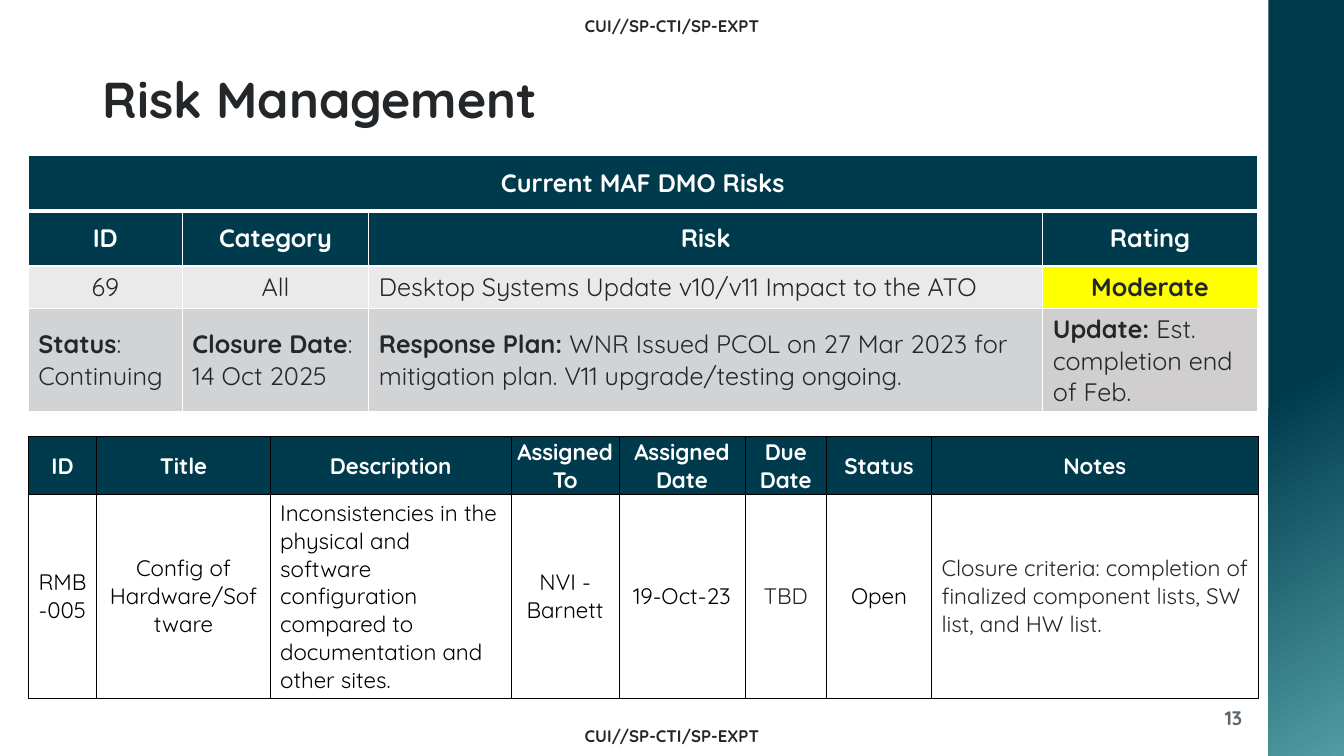
from dataclasses import dataclass

from lxml.etree import SubElement
from pptx import Presentation
from pptx.dml.color import RGBColor
from pptx.enum.shapes import MSO_SHAPE
from pptx.enum.text import MSO_ANCHOR, PP_ALIGN
from pptx.oxml.ns import qn
from pptx.util import Inches, Pt

WIDE, HIGH = Inches(13.33), Inches(7.5)
LEFT, MID, RIGHT = PP_ALIGN.LEFT, PP_ALIGN.CENTER, PP_ALIGN.RIGHT


@dataclass(frozen=True)
class Theme:
    face: str = "Quicksand"
    navy: str = "003B4D"
    teal: str = "509CA2"
    ink: str = "24272A"
    slate: str = "5B6670"
    white: str = "FFFFFF"
    black: str = "000000"
    pale: str = "EAEAEB"
    grey: str = "D2D3D5"
    warm: str = "D0CECE"
    yellow: str = "FFFF00"
    title: int = 36
    risk: int = 18
    log: int = 16
    page: int = 14
    mark: int = 12


T = Theme()


def area(x, y, w, h):
    """Turn percentages of the slide into lengths."""
    return [int(side * share / 100)
            for side, share in zip((WIDE, HIGH, WIDE, HIGH), (x, y, w, h))]


def style(font, size, color, bold):
    font.name, font.size, font.bold = T.face, Pt(size), bold
    font.color.rgb = RGBColor.from_string(color)


def write(frame, text, size, color, bold=False, align=LEFT):
    """Fill a frame; a bar in the text ends a bold lead-in."""
    lead, bar, rest = text.partition("|")
    para = frame.paragraphs[0]
    para.text, para.alignment = lead, align
    style(para.runs[0].font, size, color, bold or bool(bar))
    if bar:
        run = para.add_run()
        run.text = rest
        style(run.font, size, color, False)
    return para


def label(slide, spot, text, size, color, align):
    frame = slide.shapes.add_textbox(*area(*spot)).text_frame
    frame.word_wrap = True
    write(frame, text, size, color, True, align)


def heading(slide, spot, text):
    shape = slide.shapes.title
    shape.left, shape.top, shape.width, shape.height = area(*spot)
    shape.text_frame.vertical_anchor = MSO_ANCHOR.BOTTOM
    write(shape.text_frame, text, T.title, T.ink, True).line_spacing = 0.9


def band(slide, spot):
    shape = slide.shapes.add_shape(MSO_SHAPE.RECTANGLE, *area(*spot))
    shape.shadow.inherit = False
    shape.line.fill.background()
    shape.fill.gradient()
    shape.fill.gradient_angle = 300
    for stop, place, color in zip(shape.fill.gradient_stops, (0.5, 1), (T.navy, T.teal)):
        stop.position = place
        stop.color.rgb = RGBColor.from_string(color)


def edge(cell, color, **widths):
    """Draw the four borders, with widths in points by side."""
    props = cell._tc.get_or_add_tcPr()
    for side in "LRTB":
        line = SubElement(props, qn("a:ln" + side), w=str(Pt(widths[side])))
        fill = SubElement(line, qn("a:solidFill"))
        SubElement(fill, qn("a:srgbClr"), val=color)


def grid(slide, spot, cols, rows):
    """Add a plain table whose columns and rows share its size."""
    x, y, w, h = area(*spot)
    table = slide.shapes.add_table(len(rows), len(cols), x, y, w, h).table
    table.first_row = table.horz_banding = False
    for col, part in zip(table.columns, cols):
        col.width = int(w * part / sum(cols))
    for row, part in zip(table.rows, rows):
        row.height = int(h * part / sum(rows))
    return table


def paint(cell, text, size, color, fill=None, bold=False, align=MID):
    cell.vertical_anchor = MSO_ANCHOR.MIDDLE
    if fill:
        cell.fill.solid()
        cell.fill.fore_color.rgb = RGBColor.from_string(fill)
    else:
        cell.fill.background()
    if text:
        write(cell.text_frame, text, size, color, bold, align)


def risks(slide):
    table = grid(slide, (2.1, 20.53, 91.45, 33.87),
                 (1.53, 1.85, 6.69, 2.13), (0.55, 0.55, 0.42, 1.02))
    body = (
        ("Current MAF DMO Risks", "", "", ""),
        ("ID", "Category", "Risk", "Rating"),
        ("69", "All", "Desktop Systems Update v10/v11 Impact to the ATO", "Moderate"),
        ("Status|: Continuing", "Closure Date|: 14 Oct 2025",
         "Response Plan: |WNR Issued PCOL on 27 Mar 2023 for mitigation plan. "
         "V11 upgrade/testing ongoing.",
         "Update: |Est. completion end of Feb."),
    )
    fills = (T.navy, T.navy, T.pale, T.grey)
    special = {(2, 3): T.yellow, (3, 3): T.warm}
    for r, texts in enumerate(body):
        for c, text in enumerate(texts):
            cell = table.cell(r, c)
            edge(cell, T.white, L=1, R=1, T=3 if r == 1 else 1, B=3 if r == 0 else 1)
            head = r < 2
            left = r == 3 or (r, c) == (2, 2)
            paint(cell, text, T.risk, T.white if head else T.ink,
                  special.get((r, c), fills[r]), head or text == "Moderate",
                  LEFT if left else MID)
    table.cell(0, 0).merge(table.cell(0, 3))


def log(slide):
    table = grid(slide, (2.1, 57.73, 91.52, 34.67),
                 (0.68, 1.72, 2.39, 1.07, 1.25, 0.81, 1.04, 3.24), (0.57, 2.03))
    # Heading, entry, entry colour, entry alignment
    fields = (
        ("ID", "RMB-005", T.black, MID),
        ("Title", "Config of Hardware/Software", T.black, MID),
        ("Description", "Inconsistencies in the physical and software configuration "
         "compared to documentation and other sites.", T.black, LEFT),
        ("Assigned To", "NVI - Barnett", T.black, MID),
        ("Assigned Date", "19-Oct-23", T.black, MID),
        ("Due Date", "TBD", T.ink, MID),
        ("Status", "Open", T.black, MID),
        ("Notes", "Closure criteria: completion of finalized component lists, "
         "SW list, and HW list.", T.ink, LEFT),
    )
    for c, (head, entry, color, align) in enumerate(fields):
        top, low = table.cell(0, c), table.cell(1, c)
        for cell in (top, low):
            edge(cell, T.black, L=0.5, R=0.5, T=0.5, B=0.5)
        top.margin_left = top.margin_right = top.margin_top = Inches(0.01)
        top.margin_bottom = 0
        paint(top, head, T.log, T.white, T.navy, True)
        paint(low, entry, T.log, color, align=align)


def main():
    deck = Presentation()
    deck.slide_width, deck.slide_height = WIDE, HIGH
    slide = deck.slides.add_slide(deck.slide_layouts[5])

    # Frame of the page
    band(slide, (94.37, 0, 5.63, 100))
    for y in (1.47, 95.33):
        label(slide, (15, y, 70, 3.2), "CUI//SP-CTI/SP-EXPT", T.mark, T.ink, MID)
    label(slide, (86.27, 92.67, 6.9, 5.33), "13", T.page, T.slate, RIGHT)

    # Content
    heading(slide, (6.9, 4.93, 86.27, 12.8), "Risk Management")
    risks(slide)
    log(slide)
    deck.save("out.pptx")


if __name__ == "__main__":
    main()
